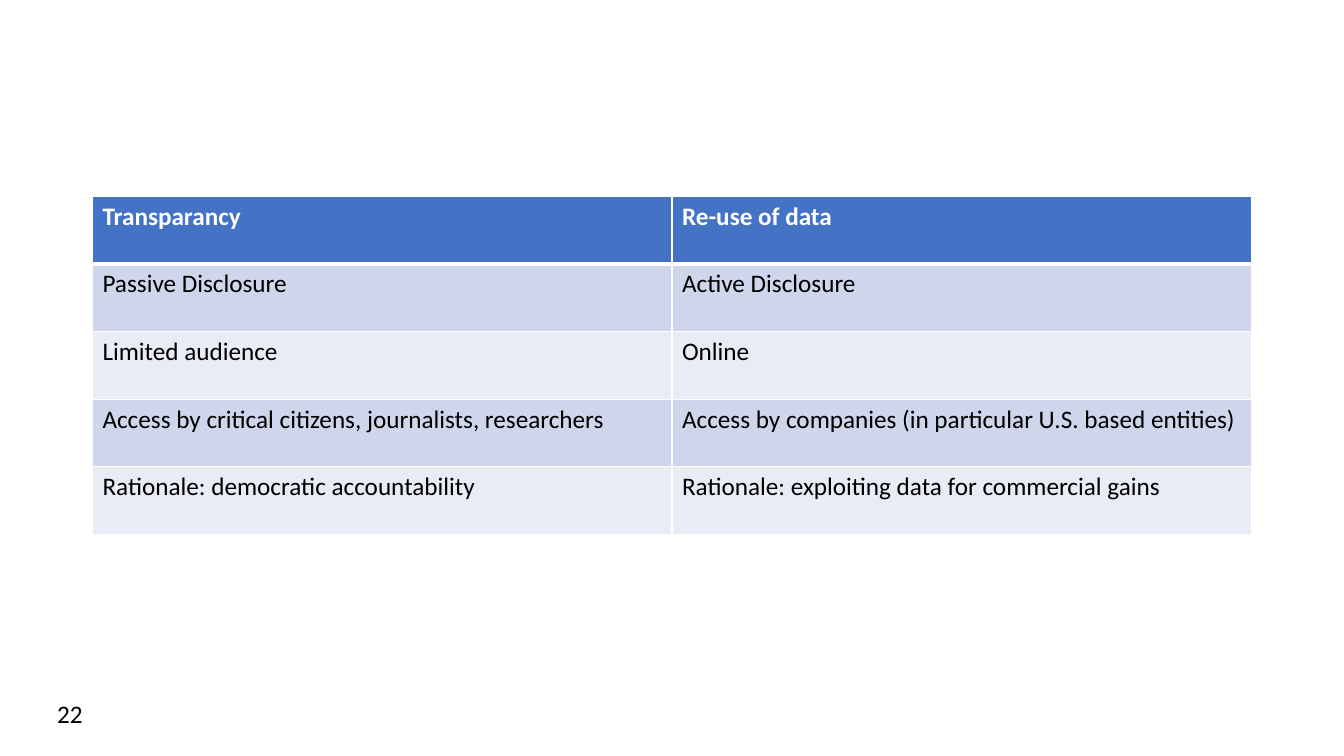
from lxml.etree import SubElement
from pptx import Presentation
from pptx.dml.color import RGBColor
from pptx.enum.text import MSO_ANCHOR
from pptx.oxml.ns import qn
from pptx.util import Cm, Pt

WHITE = RGBColor(0xFF, 0xFF, 0xFF)
BLACK = RGBColor(0x00, 0x00, 0x00)
HEADER_BLUE = RGBColor(0x44, 0x72, 0xC4)
BAND_DARK = RGBColor(0xCF, 0xD5, 0xEA)
BAND_LIGHT = RGBColor(0xE9, 0xEB, 0xF5)

COMPARISON = [
    ("Transparancy", "Re-use of data"),
    ("Passive Disclosure", "Active Disclosure"),
    ("Limited audience", "Online"),
    ("Access by critical citizens, journalists, researchers",
     "Access by companies (in particular U.S. based entities)"),
    ("Rationale: democratic accountability",
     "Rationale: exploiting data for commercial gains"),
]


def write_text(frame, text, color=BLACK, bold=False, size=18, font="Calibri"):
    frame.word_wrap = True
    run = frame.paragraphs[0].add_run()
    run.text = text
    run.font.name = font
    run.font.size = Pt(size)
    run.font.bold = bold
    run.font.color.rgb = color


def set_borders(cell, **widths):
    properties = cell._tc.get_or_add_tcPr()
    for side in "LRTB":
        width = Pt(widths.get(side, 1))
        border = SubElement(properties, qn(f"a:ln{side}"), w=str(width))
        fill = SubElement(border, qn("a:solidFill"))
        SubElement(fill, qn("a:srgbClr"), val=str(WHITE))


def format_cell(cell, text, row):
    header = row == 0
    set_borders(cell, T=3 if row == 1 else 1, B=3 if header else 1)
    cell.fill.solid()
    if header:
        cell.fill.fore_color.rgb = HEADER_BLUE
    else:
        cell.fill.fore_color.rgb = BAND_DARK if row % 2 else BAND_LIGHT
    write_text(cell.text_frame, text, color=WHITE if header else BLACK, bold=header)


def add_comparison(slide):
    table = slide.shapes.add_table(
        len(COMPARISON), 2, Cm(2.33), Cm(4.94), Cm(29.21), Cm(8.53)).table
    for row, texts in enumerate(COMPARISON):
        for column, text in enumerate(texts):
            format_cell(table.cell(row, column), text, row)


def add_page_number(slide, number):
    frame = slide.shapes.add_textbox(Cm(1.19), Cm(17.48), Cm(7.62), Cm(1.02)).text_frame
    frame.vertical_anchor = MSO_ANCHOR.MIDDLE
    write_text(frame, number)


def main():
    """Build the slide comparing transparency with re-use of data."""
    deck = Presentation()
    deck.slide_width, deck.slide_height = Cm(33.87), Cm(19.05)
    slide = deck.slides.add_slide(deck.slide_layouts[6])
    add_comparison(slide)
    add_page_number(slide, "22")
    deck.save("out.pptx")


if __name__ == "__main__":
    main()
